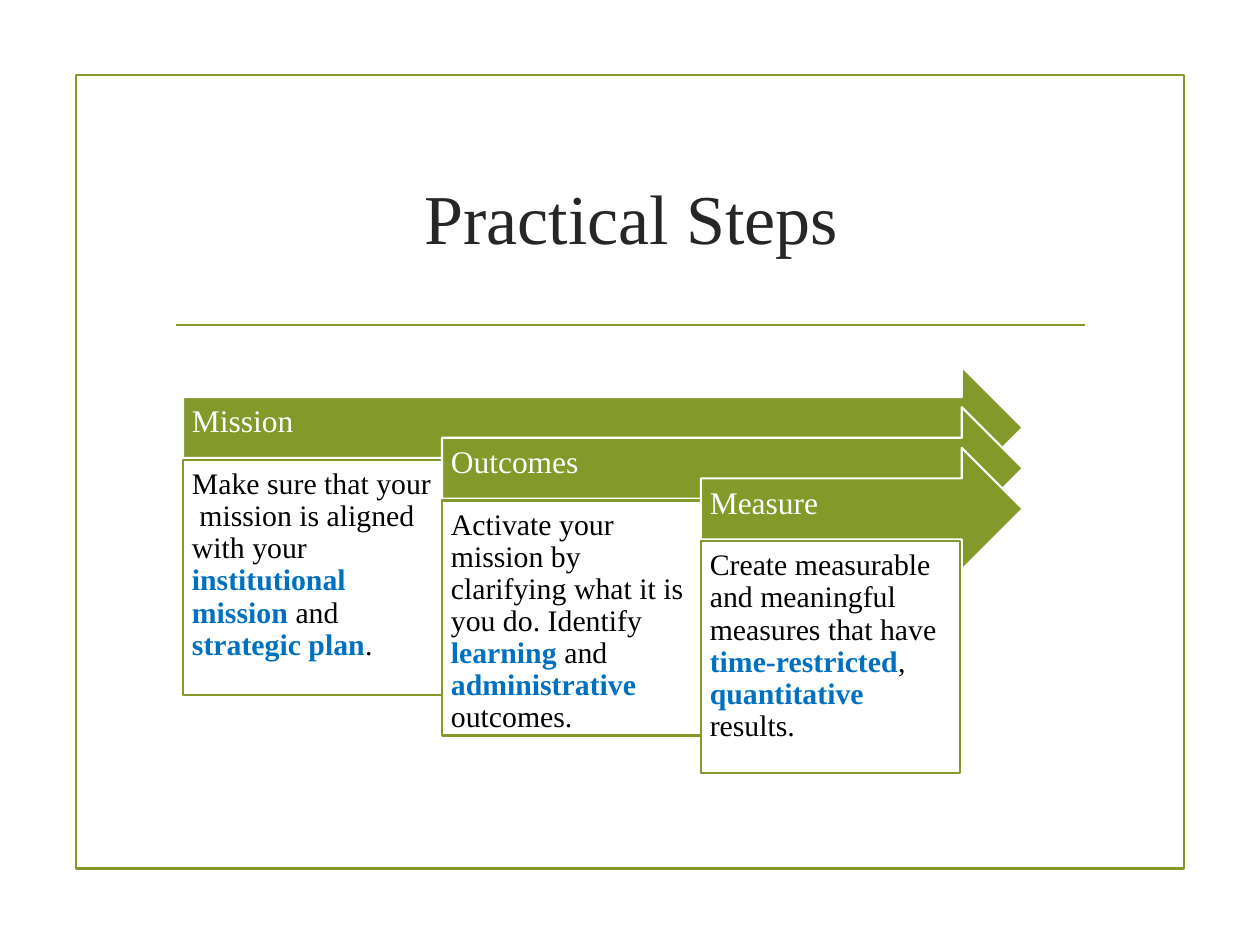
from dataclasses import dataclass

from lxml import etree
from pptx import Presentation
from pptx.dml.color import RGBColor
from pptx.enum import shapes, text
from pptx.oxml import ns
from pptx.util import Cm, Pt


@dataclass(frozen=True)
class Theme:
    font: str = "Times New Roman"
    green: RGBColor = RGBColor(0x83, 0x99, 0x2A)
    white: RGBColor = RGBColor(0xFF, 0xFF, 0xFF)
    black: RGBColor = RGBColor(0, 0, 0)
    blue: RGBColor = RGBColor(0x00, 0x70, 0xC0)
    title_color: RGBColor = RGBColor(0x26, 0x26, 0x26)
    title_size: Pt = Pt(40)
    step_size: Pt = Pt(18)
    body_size: Pt = Pt(17)
    line: Pt = Pt(1.25)


THEME = Theme()

# Step name, height of its box in cm, and text in which every second part is emphasised
STEPS = [
    ("Mission", 4.74, ["Make sure that your  mission is aligned with your ",
                       "institutional mission ", "and ", "strategic plan", "."]),
    ("Outcomes", 4.74, ["Activate your mission by clarifying what it is you do. Identify ",
                        "learning", " and ", "administrative", " outcomes."]),
    ("Measure", 4.67, ["Create measurable and meaningful measures that have ",
                       "time-restricted", ", ", "quantitative", " results."]),
]
STEPS_LEFT, STEPS_TOP, STEPS_RIGHT = 3.69, 7.39, 20.62
COLUMN, DROP = 5.22, 0.82
ARROW_HEIGHT, BOX_OFFSET = 2.46, 1.88


def style_run(r, size, color, bold=False):
    r.font.name = THEME.font
    r.font.size = size
    r.font.color.rgb = color
    r.font.bold = bold


def add_panel(s, kind, left, top, width, height, fill, line):
    sp = s.shapes.add_shape(kind, Cm(left), Cm(top), Cm(width), Cm(height))
    sp.shadow.inherit = False
    if fill is None:
        sp.fill.background()
    else:
        sp.fill.solid()
        sp.fill.fore_color.rgb = fill
    sp.line.color.rgb = line
    sp.line.width = THEME.line
    return sp


def add_rule(s, left, right, y):
    rule = s.shapes.add_connector(shapes.MSO_CONNECTOR.STRAIGHT,
                                  Cm(left), Cm(y), Cm(right), Cm(y))
    rule.line.color.rgb = THEME.green
    rule.line.width = THEME.line
    etree.SubElement(rule._element.spPr, ns.qn("a:effectLst"))


def set_title(s, words):
    title = s.shapes.title
    title.left, title.top, title.width, title.height = Cm(3.28), Cm(2.54), Cm(18.9), Cm(3.63)
    tf = title.text_frame
    tf.text = words
    tf.vertical_anchor = text.MSO_ANCHOR.MIDDLE
    p = tf.paragraphs[0]
    p.alignment = text.PP_ALIGN.CENTER
    style_run(p.runs[0], THEME.title_size, THEME.title_color)


def prepare_text(sp, anchor, right, bottom):
    """Set the frame up for left-aligned text and return its paragraph."""
    tf = sp.text_frame
    tf.word_wrap = True
    tf.vertical_anchor = anchor
    tf.margin_left = tf.margin_top = Cm(0.18)
    tf.margin_right, tf.margin_bottom = Cm(right), Cm(bottom)
    p = tf.paragraphs[0]
    p.alignment = text.PP_ALIGN.LEFT
    p.line_spacing = 0.9
    return p


def add_step(s, index, name, box_height, parts):
    left = STEPS_LEFT + index * COLUMN
    top = STEPS_TOP + index * DROP

    arrow = add_panel(s, shapes.MSO_SHAPE.RIGHT_ARROW, left, top, STEPS_RIGHT - left,
                      ARROW_HEIGHT, THEME.green, THEME.white)
    p = prepare_text(arrow, text.MSO_ANCHOR.MIDDLE, 0.71, 0.38)
    p.text = name
    style_run(p.runs[0], THEME.step_size, THEME.white)

    box = add_panel(s, shapes.MSO_SHAPE.RECTANGLE, left, top + BOX_OFFSET, COLUMN,
                    box_height, THEME.white, THEME.green)
    p = prepare_text(box, text.MSO_ANCHOR.TOP, 0.18, 0.18)
    for i, part in enumerate(parts):
        strong = i % 2 == 1
        r = p.add_run()
        r.text = part
        style_run(r, THEME.body_size, THEME.blue if strong else THEME.black, strong)


def main():
    prs = Presentation()
    prs.slide_width, prs.slide_height = Cm(25.4), Cm(19.05)
    s = prs.slides.add_slide(prs.slide_layouts[5])
    add_panel(s, shapes.MSO_SHAPE.RECTANGLE, 1.54, 1.51, 22.33, 16, None, THEME.green)
    add_rule(s, 3.55, 21.87, 6.55)
    set_title(s, "Practical Steps")
    for index, step in enumerate(STEPS):
        add_step(s, index, *step)
    prs.save("out.pptx")


if __name__ == "__main__":
    main()
